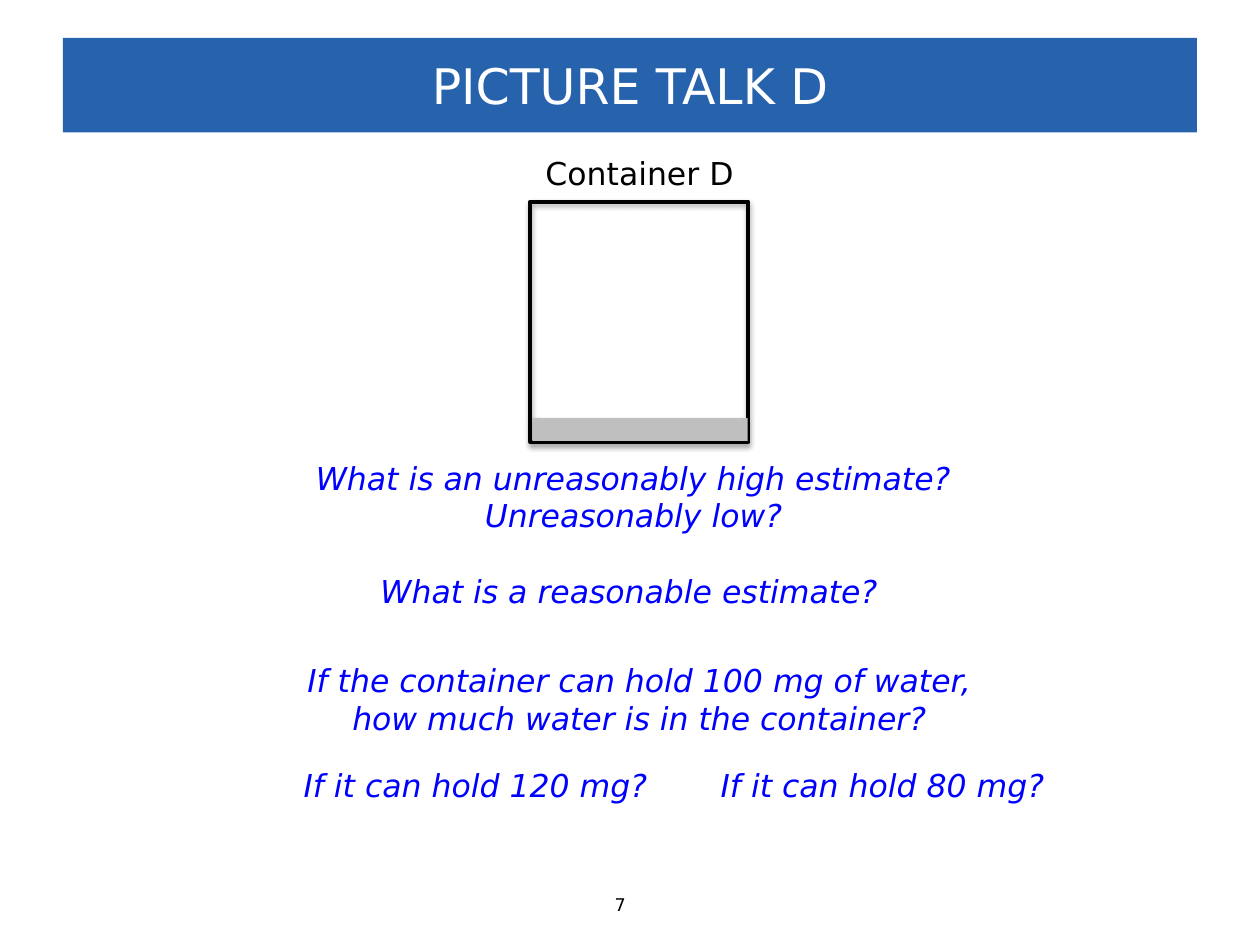
"""Build the Picture Talk D slide about estimating the water in a container."""
from lxml.etree import SubElement
from pptx import Presentation
from pptx.dml.color import RGBColor
from pptx.enum.shapes import MSO_SHAPE as Shape
from pptx.enum.text import MSO_ANCHOR as Anchor, PP_ALIGN as Align
from pptx.oxml.ns import qn
from pptx.util import Pt

BLACK = RGBColor(0x00, 0x00, 0x00)
WHITE = RGBColor(0xFF, 0xFF, 0xFF)
BANNER_BLUE = RGBColor(0x27, 0x62, 0xAD)
QUESTION_BLUE = RGBColor(0x00, 0x00, 0xFF)
WATER_GRAY = RGBColor(0xBF, 0xBF, 0xBF)
FONT = "DejaVu Sans"

TITLE = "PICTURE TALK D"
LABELS = [
    ("Container D", 18, (304.6, 84.2, 123, 29)),
    ("7", 10, (344.2, 507.6, 31.7, 19.4)),
]
QUESTIONS = [
    ("What is an unreasonably high estimate? Unreasonably low?", (172, 258.5, 380, 51)),
    ("What is a reasonable estimate?", (209.5, 323.3, 300, 29)),
    ("If the container can hold 100 mg of water, how much water is in the container?",
     (162.7, 374.4, 405.4, 51)),
    ("If it can hold 120 mg?", (162.7, 434.2, 218, 29)),
    ("If it can hold 80 mg?", (395.3, 434.2, 218, 29)),
]
CONTAINER = (303.1, 115.2, 124.6, 137.5)
WATER = (304.2, 239, 123, 13)


def write(shape, text, size, color, align, italic=False, wrap=True):
    frame = shape.text_frame
    frame.word_wrap = wrap
    para = frame.paragraphs[0]
    para.text = text
    para.alignment = align
    font = para.font
    font.name, font.size, font.italic = FONT, Pt(size), italic
    font.color.rgb = color


def add_rectangle(page, bounds, fill=None):
    shape = page.shapes.add_shape(Shape.RECTANGLE, *map(Pt, bounds))
    shape.shadow.inherit = False
    if fill is None:
        shape.fill.background()
    else:
        shape.fill.solid()
        shape.fill.fore_color.rgb = fill
    shape.line.fill.background()
    return shape


def add_shadow(shape):
    effects = shape.element.spPr.find(qn("a:effectLst"))
    shadow = SubElement(effects, qn("a:outerShdw"), blurRad=str(Pt(3.1)),
                        dist=str(Pt(1.8)), dir="5400000", rotWithShape="0")
    color = SubElement(shadow, qn("a:srgbClr"), val=str(BLACK))
    SubElement(color, qn("a:alpha"), val="35000")


def main():
    deck = Presentation()
    deck.slide_width, deck.slide_height = Pt(720), Pt(540)
    page = deck.slides.add_slide(deck.slide_layouts[6])

    banner = add_rectangle(page, (36, 21.6, 648, 54), BANNER_BLUE)
    banner.text_frame.vertical_anchor = Anchor.MIDDLE
    write(banner, TITLE, 28, WHITE, Align.CENTER)

    for text, size, bounds in LABELS:
        box = page.shapes.add_textbox(*map(Pt, bounds))
        write(box, text, size, BLACK, Align.LEFT, wrap=False)
    for text, bounds in QUESTIONS:
        box = page.shapes.add_textbox(*map(Pt, bounds))
        write(box, text, 18, QUESTION_BLUE, Align.CENTER, italic=True)

    container = add_rectangle(page, CONTAINER)
    container.line.color.rgb = BLACK
    container.line.width = Pt(2.25)
    water = add_rectangle(page, WATER, WATER_GRAY)
    for shape in (container, water):
        add_shadow(shape)

    deck.save("out.pptx")


if __name__ == "__main__":
    main()
